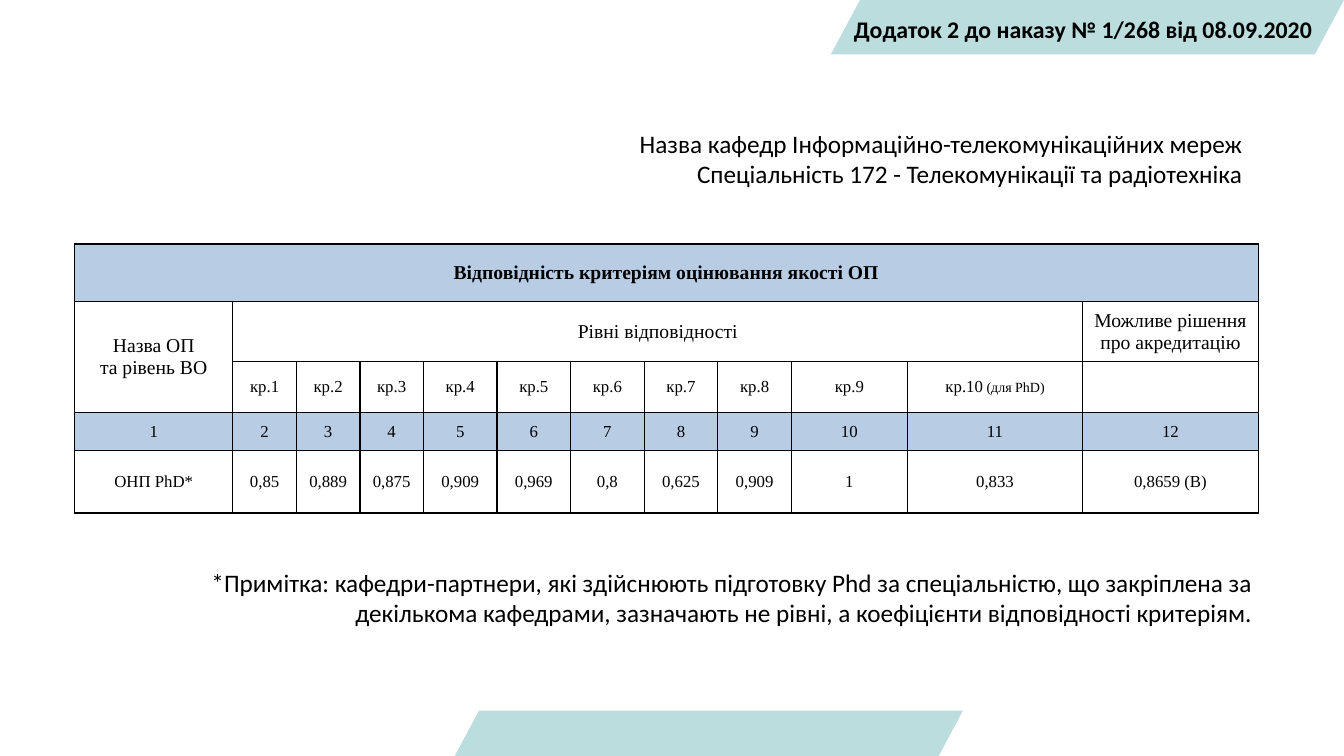
from dataclasses import dataclass

from lxml import etree
from pptx import Presentation
from pptx import util as u
from pptx.dml.color import RGBColor
from pptx.enum import shapes, text
from pptx.oxml import ns

PX = 9144
BLACK = RGBColor(0x00, 0x00, 0x00)
WHITE = RGBColor(0xFF, 0xFF, 0xFF)
TEAL = RGBColor(0xBB, 0xDD, 0xDE)
BLUE = RGBColor(0xB8, 0xCC, 0xE4)

LEFT = text.PP_ALIGN.LEFT
CENTER = text.PP_ALIGN.CENTER
RIGHT = text.PP_ALIGN.RIGHT


def px(value: int) -> int:
    return u.Emu(value * PX)


@dataclass(frozen=True)
class Area:
    left: int
    top: int
    width: int
    height: int

    def emu(self) -> list[int]:
        return [px(n) for n in (self.left, self.top, self.width, self.height)]


@dataclass(frozen=True)
class Backdrop:
    area: Area
    preset: shapes.MSO_SHAPE
    color: RGBColor
    adjustments: tuple[float, ...] = ()


@dataclass(frozen=True)
class Caption:
    area: Area
    lines: tuple[str, ...]
    size: int
    align: text.PP_ALIGN
    bold: bool = False
    wrap: bool = True


@dataclass(frozen=True)
class Span:
    first: tuple[int, int]
    last: tuple[int, int]


BACKDROPS = (
    Backdrop(Area(451, 0, 882, 750), shapes.MSO_SHAPE.PARALLELOGRAM, TEAL, (0.536,)),
    Backdrop(Area(0, 54, 1333, 651), shapes.MSO_SHAPE.RECTANGLE, WHITE),
)

CAPTIONS = (
    Caption(
        Area(97, 558, 1155, 71),
        ("*Примітка: кафедри-партнери, які здійснюють підготовку Phd за спеціальністю, "
         "що закріплена за декількома кафедрами, зазначають не рівні, "
         "а коефіцієнти відповідності критеріям.",),
        18, RIGHT,
    ),
    Caption(
        Area(837, 10, 496, 39),
        ("Додаток 2 до наказу № 1/268 від 08.09.2020",),
        17, LEFT, bold=True, wrap=False,
    ),
    Caption(
        Area(497, 122, 745, 71),
        ("Назва кафедр Інформаційно-телекомунікаційних мереж",
         "Спеціальність 172 - Телекомунікації та радіотехніка"),
        18, RIGHT,
    ),
)

TABLE_AREA = Area(74, 242, 1174, 267)
COLUMNS = (157, *[63] * 3, *[73] * 5, 115, 174, 174)
ROWS = (57, 60, 50, 38, 62)
ROW_FILLS = (BLUE, None, None, BLUE, WHITE)
ROW_SIZES = (14, 14, 12, 12, 12)
SPANS = (Span((0, 0), (0, 11)), Span((1, 0), (2, 0)), Span((1, 1), (1, 10)))
NARROW_INSETS = {(1, 11), (2, 10)}
PHD_NOTE = " (для PhD)"
VALUES = (
    ("Відповідність критеріям оцінювання якості ОП", *[""] * 11),
    ("Назва ОП\vта рівень ВО", "Рівні відповідності", *[""] * 9,
     "Можливе рішення про акредитацію"),
    ("", *[f"кр.{n}" for n in range(1, 11)], ""),
    tuple(str(n) for n in range(1, 13)),
    ("ОНП PhD*", "0,85", "0,889", "0,875", "0,909", "0,969", "0,8", "0,625",
     "0,909", "1", "0,833", "0,8659 (B)"),
)


def apply(target, formats: dict) -> None:
    for name, value in formats.items():
        setattr(target, name, value)


def style_font(font, name: str, size: int, bold: bool = False) -> None:
    apply(font, {"name": name, "size": u.Pt(size), "bold": bold})
    font.color.rgb = BLACK


def draw_backdrop(page, item: Backdrop) -> None:
    shape = page.shapes.add_shape(item.preset, *item.area.emu())
    shape.shadow.inherit = False
    shape.fill.solid()
    shape.fill.fore_color.rgb = item.color
    shape.line.fill.background()
    for index, value in enumerate(item.adjustments):
        shape.adjustments[index] = value


def draw_caption(page, item: Caption) -> None:
    box = page.shapes.add_textbox(*item.area.emu())
    frame = box.text_frame
    apply(frame, {"word_wrap": item.wrap, "auto_size": text.MSO_AUTO_SIZE.SHAPE_TO_FIT_TEXT})
    for index, line in enumerate(item.lines):
        para = frame.add_paragraph() if index else frame.paragraphs[0]
        para.alignment = item.align
        span = para.add_run()
        span.text = line
        style_font(span.font, "Calibri", item.size, item.bold)


def add_borders(cell) -> None:
    properties = cell._tc.get_or_add_tcPr()
    for side in ("a:lnL", "a:lnR", "a:lnT", "a:lnB"):
        line = etree.SubElement(properties, ns.qn(side), w=str(u.Pt(1)))
        fill = etree.SubElement(line, ns.qn("a:solidFill"))
        etree.SubElement(fill, ns.qn("a:srgbClr"), val=str(BLACK))


def fill_cell(cell, row: int, column: int) -> None:
    inset = px(2 if (row, column) in NARROW_INSETS else 7)
    apply(cell, {
        "margin_left": inset, "margin_right": inset, "margin_top": 0, "margin_bottom": 0,
        "vertical_anchor": text.MSO_ANCHOR.MIDDLE,
    })
    add_borders(cell)
    color = ROW_FILLS[row]
    if color is None:
        cell.fill.background()
    else:
        cell.fill.solid()
        cell.fill.fore_color.rgb = color
    para = cell.text_frame.paragraphs[0]
    para.alignment = CENTER
    if VALUES[row][column]:
        para.text = VALUES[row][column]
    for span in para.runs:
        style_font(span.font, "Times New Roman", ROW_SIZES[row], bold=row == 0)


def draw_table(page) -> None:
    table = page.shapes.add_table(len(ROWS), len(COLUMNS), *TABLE_AREA.emu()).table
    apply(table, {"first_row": False, "horz_banding": False})
    for column, width in zip(table.columns, COLUMNS):
        column.width = px(width)
    for row, height in zip(table.rows, ROWS):
        row.height = px(height)
    for row in range(len(ROWS)):
        for column in range(len(COLUMNS)):
            fill_cell(table.cell(row, column), row, column)
    for span in SPANS:
        table.cell(*span.first).merge(table.cell(*span.last))
    note = table.cell(2, 10).text_frame.paragraphs[0].add_run()
    note.text = PHD_NOTE
    style_font(note.font, "Times New Roman", 10)


def main() -> None:
    deck = Presentation()
    apply(deck, {"slide_width": px(1333), "slide_height": px(750)})
    page = deck.slides.add_slide(deck.slide_layouts[6])
    for backdrop in BACKDROPS:
        draw_backdrop(page, backdrop)
    draw_table(page)
    for caption in CAPTIONS:
        draw_caption(page, caption)
    deck.save("out.pptx")


if __name__ == "__main__":
    main()
